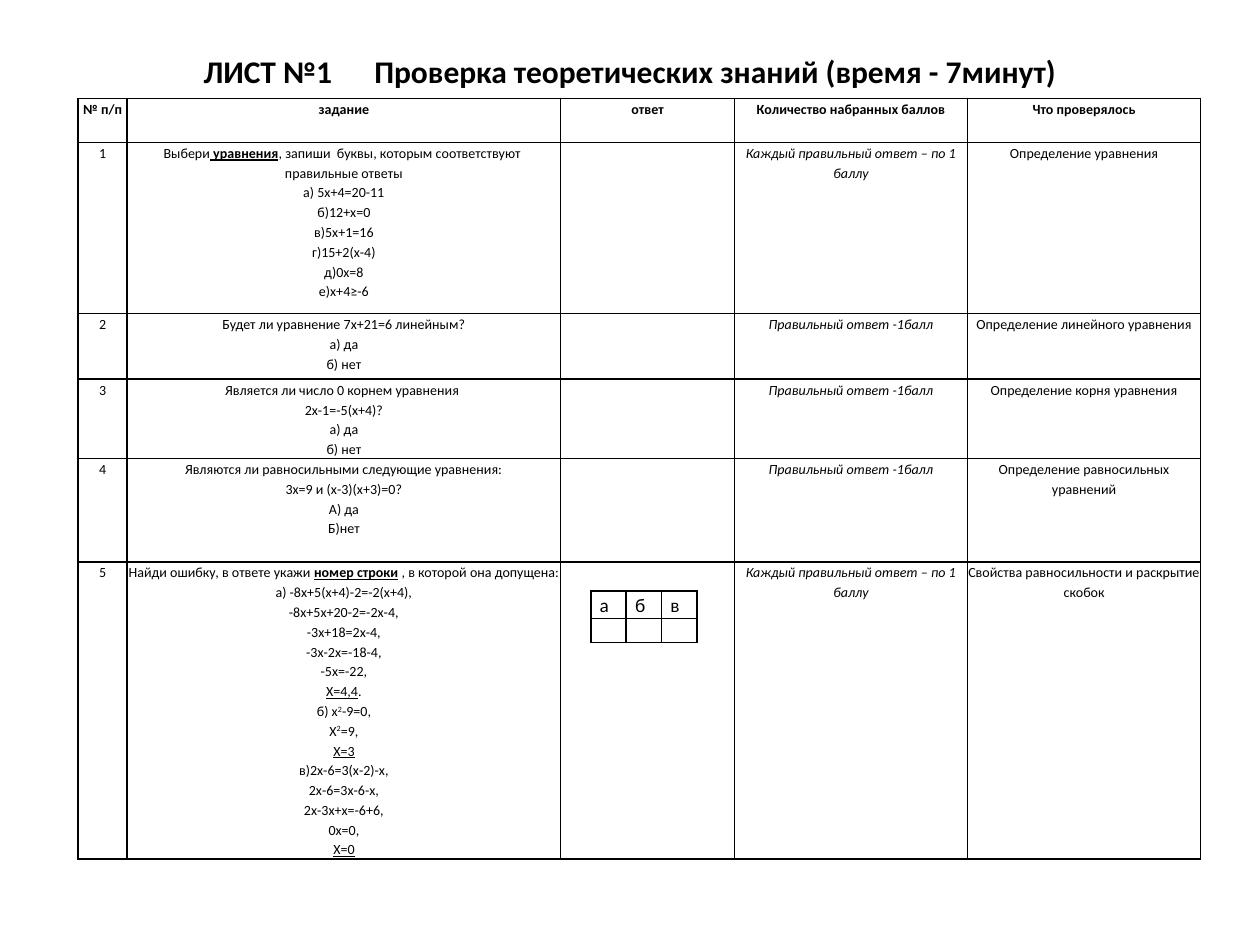
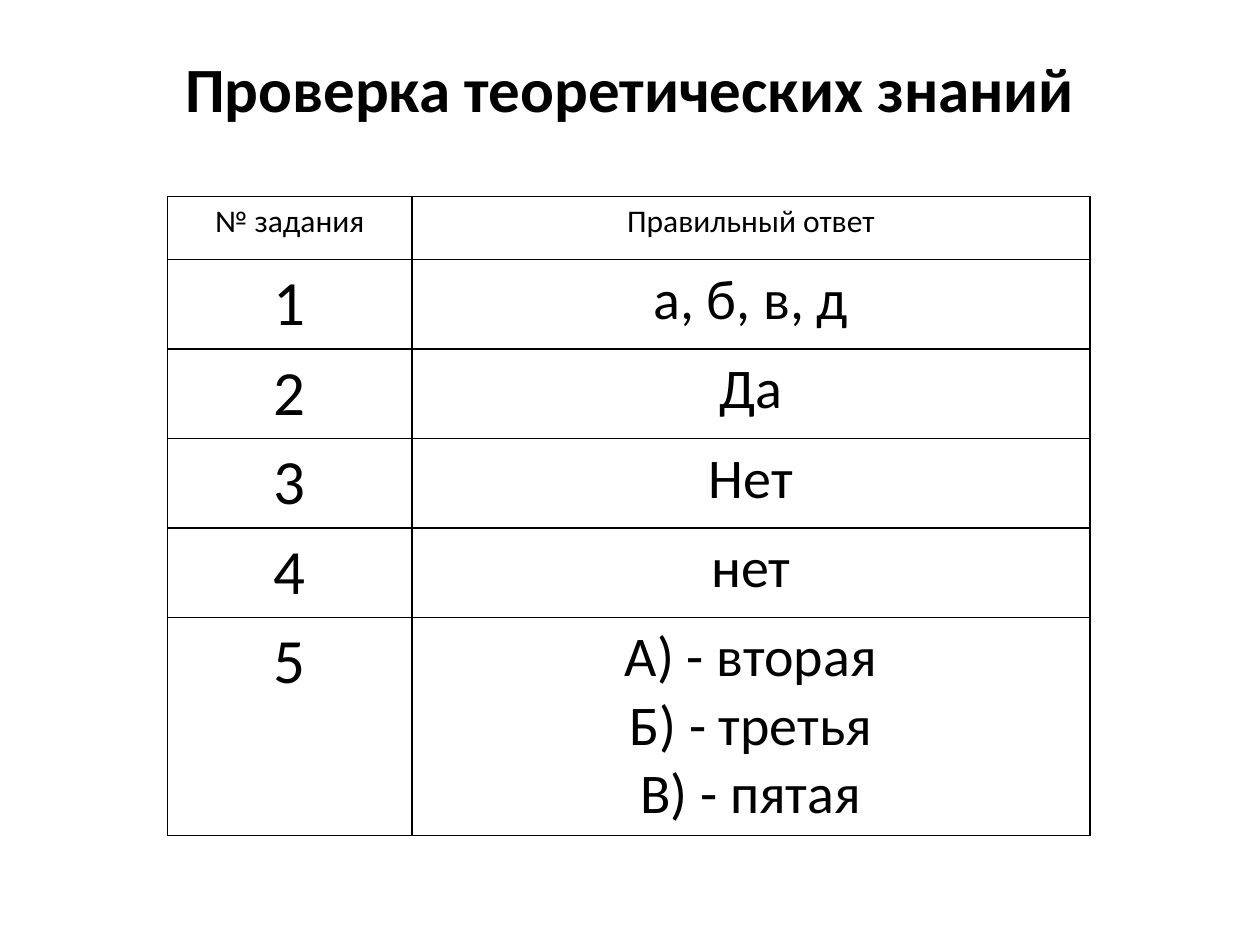
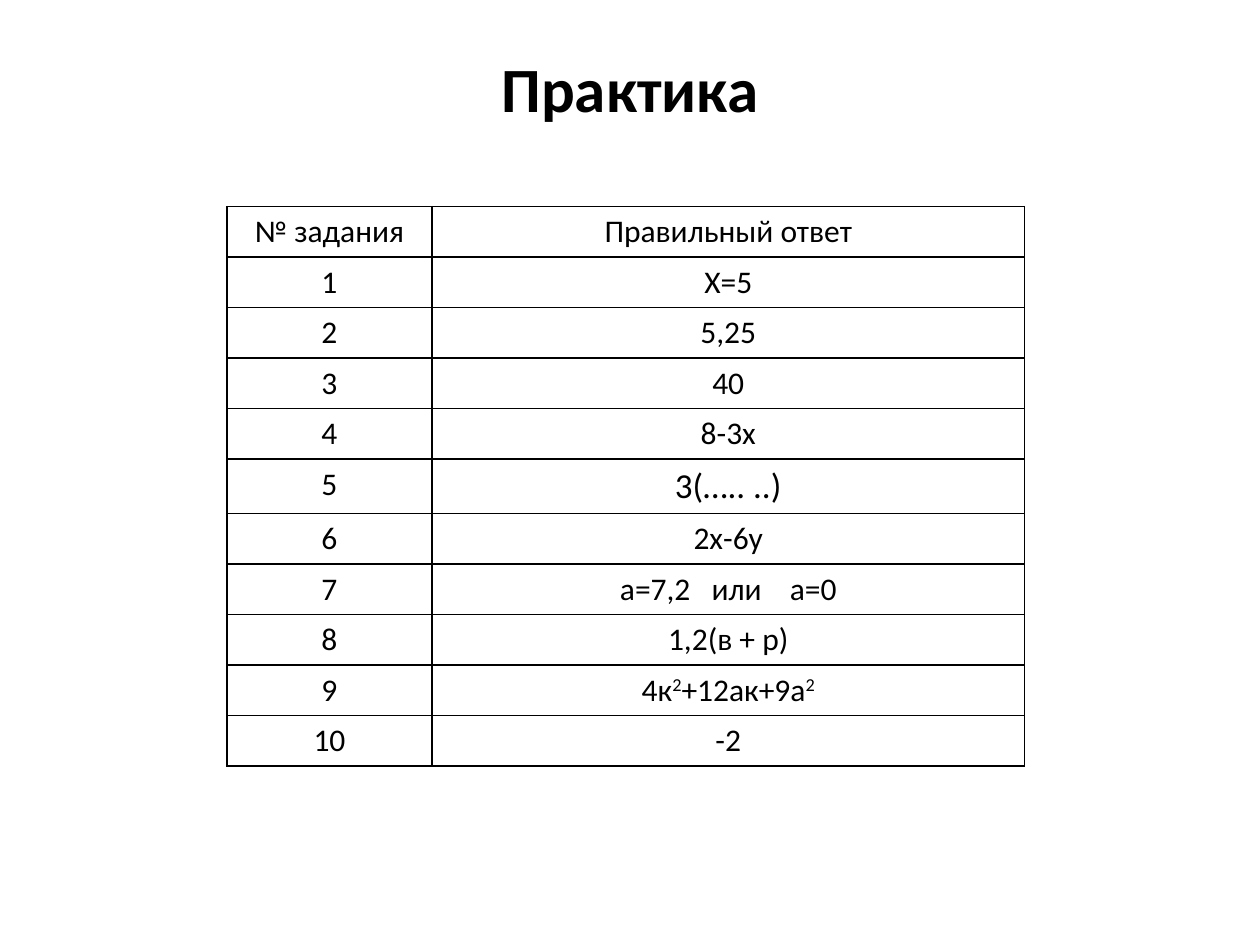
"""Builds three slides of an algebra check: the question sheet and two answer keys."""
from dataclasses import dataclass

from lxml import etree
from pptx import Presentation, util as u
from pptx.dml.color import RGBColor
from pptx.enum import text
from pptx.oxml.ns import qn


@dataclass(frozen=True)
class Theme:
    """Colours, type sizes and spacing shared by the slides."""
    font: str = "Calibri"
    ink: str = "000000"
    border: float = 1
    title: int = 36
    sheet_title: int = 18
    sheet: int = 8
    answer_box: int = 11
    key: int = 18
    key_large: int = 20
    key_number: int = 36
    key_answer: int = 32
    loose: float = 1.15


@dataclass(frozen=True)
class Span:
    """A stretch of text with its own look."""
    words: str
    bold: bool = False
    italic: bool = False
    underline: bool = False
    raised: bool = False
    spread: int = 0
    size: int = 0


def as_list(content):
    """Wrap a single item in a list."""
    return list(content) if isinstance(content, (list, tuple)) else [content]


class SlideBuilder:
    """Holds the theme and the current slide, and draws its elements."""

    def __init__(self, deck, theme):
        """Keep the deck and the theme."""
        self.deck, self.theme, self.page = deck, theme, None

    def new_page(self):
        """Start a slide on the blank layout."""
        self.page = self.deck.slides.add_slide(self.deck.slide_layouts[6])

    def fill_text(self, frame, content, size, align=text.PP_ALIGN.CENTER, spacing=None):
        """Fill a text frame with paragraphs made of spans."""
        for index, spans in enumerate(as_list(content)):
            para = frame.add_paragraph() if index else frame.paragraphs[0]
            para.alignment, para.line_spacing = align, spacing
            for item in as_list(spans):
                self.add_span(para, item if isinstance(item, Span) else Span(item), size)

    def add_span(self, para, item, size):
        """Add one run with its formatting."""
        span = para.add_run()
        span.text = item.words
        span.font.name, span.font.size = self.theme.font, u.Pt(item.size or size)
        span.font.bold, span.font.italic = item.bold, item.italic
        span.font.underline = item.underline
        span.font.color.rgb = RGBColor.from_string(self.theme.ink)
        properties = span._r.get_or_add_rPr()
        if item.raised:
            properties.set("baseline", "30000")
        if item.spread:
            properties.set("spc", str(item.spread * 100))

    def title(self, content, size, height=0.79, bottom=0.05):
        """Add the centred bold title."""
        box = self.page.shapes.add_textbox(u.Inches(0.5), u.Inches(0.3), u.Inches(9), u.Inches(height))
        frame = box.text_frame
        frame.word_wrap = True
        frame.vertical_anchor = text.MSO_ANCHOR.MIDDLE
        frame.margin_bottom = u.Inches(bottom)
        self.fill_text(frame, content, size)

    def table(self, left, top, widths, heights, rows, size, margins=(0.1, 0.05), **style):
        """Add a ruled table without fill."""
        shape = self.page.shapes.add_table(len(rows), len(widths), u.Inches(left), u.Inches(top),
                                           u.Inches(sum(widths)), u.Inches(sum(heights)))
        grid = shape.table
        grid.first_row = grid.horz_banding = False
        for column, width in zip(grid.columns, widths):
            column.width = u.Inches(width)
        for row, height, contents in zip(grid.rows, heights, rows):
            row.height = u.Inches(height)
            for cell, content in zip(row.cells, contents):
                cell.margin_left = cell.margin_right = u.Inches(margins[0])
                cell.margin_top = cell.margin_bottom = u.Inches(margins[1])
                self.rule(cell)
                cell.fill.background()
                if content:
                    self.fill_text(cell.text_frame, content, size, **style)
                else:
                    ending = etree.SubElement(cell.text_frame.paragraphs[0]._p, qn("a:endParaRPr"))
                    ending.set("sz", str(size * 100))

    def rule(self, cell):
        """Draw the four borders of a cell."""
        properties = cell._tc.get_or_add_tcPr()
        for side in ("a:lnL", "a:lnR", "a:lnT", "a:lnB"):
            line = etree.SubElement(properties, qn(side), w=str(u.Pt(self.theme.border)))
            fill = etree.SubElement(line, qn("a:solidFill"))
            etree.SubElement(fill, qn("a:srgbClr"), val=self.theme.ink)


SHEET_HEADINGS = ["№ п/п", "задание", "ответ", "Количество набранных баллов", "Что проверялось"]
KEY_HEADINGS = ["№ задания", "Правильный ответ"]
SQUARE = Span("2", raised=True)
EACH_POINT = "Каждый правильный ответ – по 1 баллу"
ONE_POINT = "Правильный ответ -1балл"

TASKS = [
    ([["Выбери", Span(" уравнения", bold=True, underline=True),
       ", запиши  буквы, которым соответствуют "],
      "правильные ответы", "а) 5х+4=20-11", "б)12+х=0", "в)5х+1=16", "г)15+2(х-4)", "д)0х=8", "е)х+4≥-6"],
     EACH_POINT, "Определение уравнения"),
    (["Будет ли уравнение 7х+21=6 линейным?", "а) да", "б) нет"],
     ONE_POINT, "Определение линейного уравнения"),
    (["Является ли число 0 корнем уравнения ", "2х-1=-5(х+4)?", "а) да", "б) нет"],
     ONE_POINT, "Определение корня уравнения"),
    (["Являются ли равносильными следующие уравнения:", "3х=9 и (х-3)(х+3)=0?", "А) да", "Б)нет"],
     ONE_POINT, "Определение равносильных уравнений"),
    ([["Найди ошибку, в ответе укажи ", Span("номер строки", bold=True, underline=True),
       " , в которой она допущена:"],
      "а) -8х+5(х+4)-2=-2(х+4),", "-8х+5х+20-2=-2х-4,", "-3х+18=2х-4,", "-3х-2х=-18-4,", "-5х=-22,",
      [Span("Х=4,4", underline=True), "."],
      ["б) х", SQUARE, "-9=0,"], ["Х", SQUARE, "=9,"], Span("Х=3", underline=True),
      "в)2х-6=3(х-2)-х,", "2х-6=3х-6-х,", "2х-3х+х=-6+6,", "0х=0,", Span("Х=0", underline=True)],
     EACH_POINT, "Свойства равносильности и раскрытие скобок"),
]

THEORY_ANSWERS = [["а, б, в, д"], ["Да"], ["Нет"], ["нет"], ["А) - вторая", "Б) - третья", "В) - пятая"]]


def question_sheet(builder):
    """Draw the sheet of theory questions."""
    theme = builder.theme
    builder.new_page()
    heading = [Span("ЛИСТ №1", bold=True), Span(" ", bold=True, spread=20),
               Span("Проверка теоретических знаний (время - 7минут)", bold=True)]
    builder.title([heading], theme.sheet_title, height=1.25, bottom=0.78)
    rows = [[Span(name, bold=True) for name in SHEET_HEADINGS]]
    rows += [[str(number), task, None, Span(points, italic=True), topic]
             for number, (task, points, topic) in enumerate(TASKS, 1)]
    builder.table(0.62, 0.78, [0.39, 3.44, 1.38, 1.85, 1.85], [0.35, 1.36, 0.52, 0.63, 0.82, 2.36],
                  rows, theme.sheet, margins=(0, 0), spacing=theme.loose)
    builder.table(4.69, 4.69, [0.28] * 3, [0.22, 0.19], ["абв", [None] * 3], theme.answer_box,
                  margins=(0.07, 0), align=text.PP_ALIGN.LEFT, spacing=theme.loose)


def theory_key(builder):
    """Draw the answers to the theory questions."""
    theme = builder.theme
    builder.new_page()
    builder.title(Span("Проверка теоретических знаний", bold=True), theme.title)
    rows = [KEY_HEADINGS]
    rows += [[Span(str(number), size=theme.key_number),
              [Span(line, size=theme.key_answer) for line in answer]]
             for number, answer in enumerate(THEORY_ANSWERS, 1)]
    builder.table(1.33, 1.56, [1.94, 5.38], [0.5] + [0.71] * 4 + [1.73], rows, theme.key)


def practice_key(builder):
    """Draw the answers to the practice tasks."""
    theme = builder.theme
    builder.new_page()
    builder.title(Span("Практика", bold=True), theme.title)
    answers = ["Х=5", "5,25", "40", "8-3х", Span("3(….. ..)", size=theme.key_large), "2х-6у",
               [["а=7,2", Span(" ", spread=8), "или", Span(" ", spread=12), "а=0"]],
               "1,2(в + р)", [["4к", SQUARE, "+12ак+9а", SQUARE]], "-2"]
    rows = [KEY_HEADINGS] + [[str(number), answer] for number, answer in enumerate(answers, 1)]
    builder.table(1.8, 1.64, [1.63, 4.7], [0.4] * len(rows), rows, theme.key)


def main():
    """Build and save the deck."""
    deck = Presentation()
    deck.slide_width, deck.slide_height = u.Inches(10), u.Inches(7.5)
    builder = SlideBuilder(deck, Theme())
    for draw in (question_sheet, theory_key, practice_key):
        draw(builder)
    deck.save("out.pptx")


if __name__ == "__main__":
    main()
